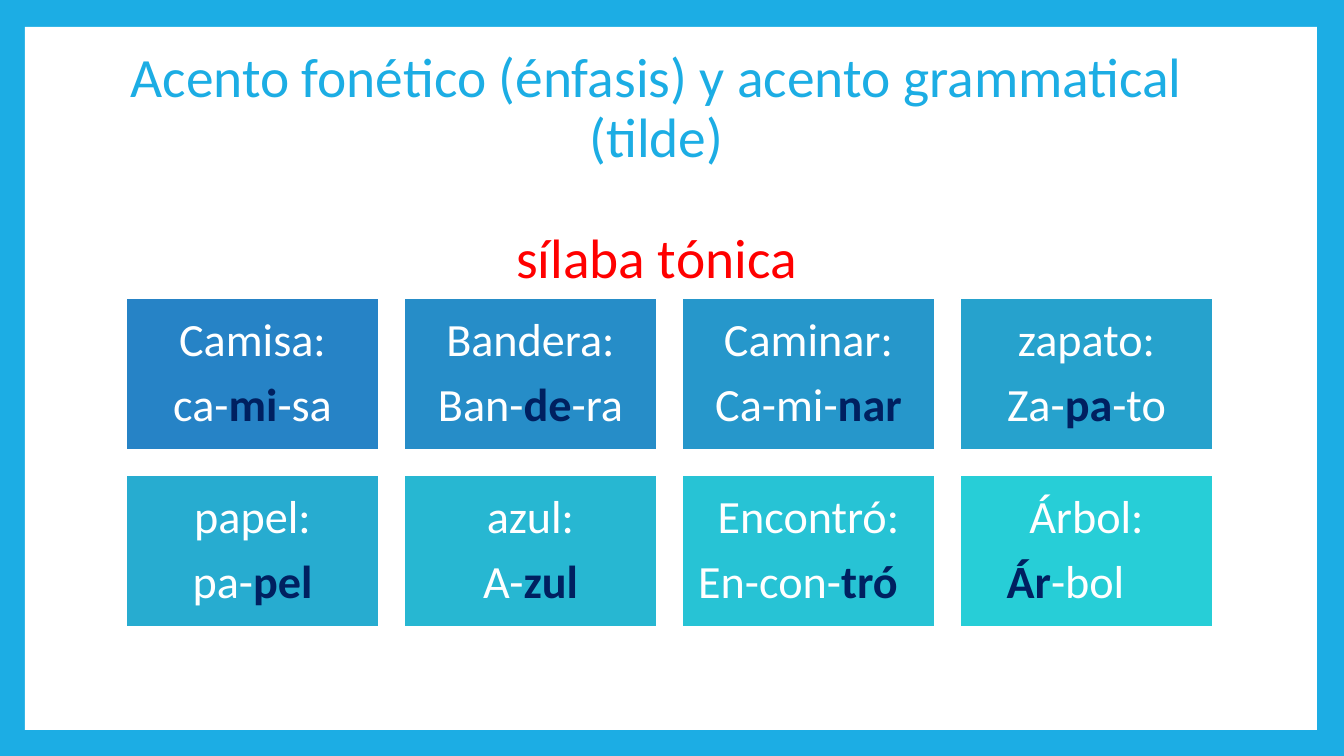
from pptx import Presentation
from pptx.dml.color import RGBColor
from pptx.enum.shapes import MSO_SHAPE
from pptx.enum.text import MSO_ANCHOR, PP_ALIGN
from pptx.util import Pt

RECT = MSO_SHAPE.RECTANGLE
MIDDLE = MSO_ANCHOR.MIDDLE
CENTER = PP_ALIGN.CENTER
PX = 914400 / 100.8
FONT = "Calibri"
HUES = {"sky": "1CADE4", "white": "FFFFFF", "red": "FF0000", "navy": "002060"}

# fill, word, syllables (stressed one between stars), left shift of the syllables
CARDS = [
    ("2683C6", "Camisa:", "ca-*mi*-sa", 0),
    ("268DC8", "Bandera:", "Ban-*de*-ra", 0),
    ("2697CB", "Caminar:", "Ca-mi-*nar*", 0),
    ("26A2CD", "zapato:", "Za-*pa*-to", 0),
    ("27ACD0", "papel:", "pa-*pel*", 0),
    ("27B7D2", "azul:", "A-*zul*", 0),
    ("27C3D5", "Encontró:", "En-con-*tró*", 21),
    ("27CED7", "Árbol:", "*Ár*-bol", 42),
]
COLS = 4
LEFT, TOP, WIDE, HIGH = 126, 298, 253, 152
STEP_X, STEP_Y = 278, 177
SIDE = 4


def px(n):
    return round(n * PX)


def add_run(para, text, size, hue, bold=False):
    para.alignment = CENTER
    para.line_spacing = 0.9
    run = para.add_run()
    run.text = text
    run.font.name = FONT
    run.font.size = Pt(size)
    run.font.bold = bold
    run.font.color.rgb = RGBColor.from_string(HUES[hue])


deck = Presentation()
deck.slide_width, deck.slide_height = px(1344), px(756)
slide = deck.slides.add_slide(deck.slide_layouts[5])
slide.background.fill.solid()
slide.background.fill.fore_color.rgb = RGBColor.from_string(HUES["sky"])

# White panel, behind the title
title = slide.shapes.title
panel = slide.shapes.add_shape(RECT, px(25), px(27), px(1292), px(703))
panel.shadow.inherit = False
panel.fill.solid()
panel.fill.fore_color.rgb = RGBColor.from_string(HUES["white"])
panel.line.fill.background()
title.element.addprevious(panel.element)

# Title: the deep bottom inset lifts the text above the cards
title.left, title.top, title.width, title.height = px(112), px(126), px(1089), px(149)
frame = title.text_frame
frame.word_wrap = True
frame.vertical_anchor = MIDDLE
frame.margin_top, frame.margin_bottom = px(5), px(66)
add_run(frame.paragraphs[0], "Acento fonético (énfasis) y acento grammatical (tilde)", 39.6, "sky")
topic = frame.add_paragraph()
topic.space_before = Pt(43.5)
add_run(topic, "sílaba tónica", 39.6, "red")

# Word cards
for i, (fill, word, parts, shift) in enumerate(CARDS):
    row, col = divmod(i, COLS)
    card = slide.shapes.add_shape(
        RECT, px(LEFT + col * STEP_X), px(TOP + row * STEP_Y), px(WIDE), px(HIGH))
    card.shadow.inherit = False
    card.fill.solid()
    card.fill.fore_color.rgb = RGBColor.from_string(fill)
    card.line.color.rgb = RGBColor.from_string(HUES["white"])
    card.line.width = Pt(1.5)

    frame = card.text_frame
    frame.word_wrap = True
    frame.vertical_anchor = MIDDLE
    frame.margin_left, frame.margin_right = px(SIDE), px(SIDE + shift)
    head = frame.paragraphs[0]
    head.space_after = Pt(11)
    add_run(head, word, 33, "white")
    if shift:  # keeps the word centred in the card
        head._p.get_or_add_pPr().set("marL", str(px(shift)))

    split = frame.add_paragraph()
    for j, part in enumerate(parts.split("*")):
        if part:
            stress = j == 1
            add_run(split, part, 33, "navy" if stress else "white", stress)

deck.save("out.pptx")
